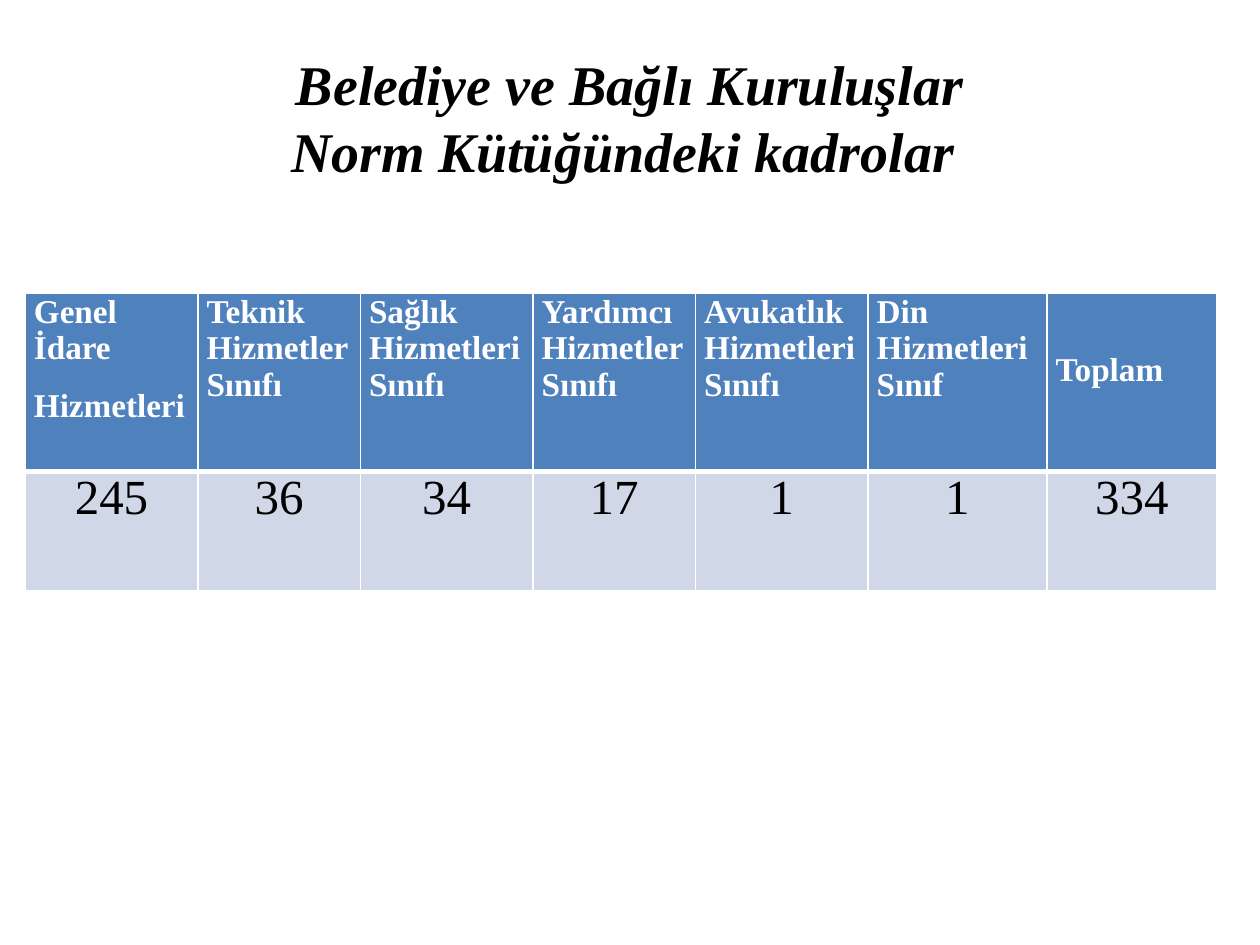
import pptx
import pptx.dml.color
import pptx.enum.text
import pptx.oxml
import pptx.oxml.ns
import pptx.util
from pptx.util import Inches

ALIGN = pptx.enum.text.PP_ALIGN
ANCHOR = pptx.enum.text.MSO_ANCHOR
HEADS = [
    ["Genel İdare ", "Hizmetleri"],
    ["Teknik Hizmetler Sınıfı"],
    ["Sağlık Hizmetleri Sınıfı"],
    ["Yardımcı Hizmetler Sınıfı"],
    ["Avukatlık Hizmetleri Sınıfı"],
    ["Din Hizmetleri Sınıf"],
    ["Toplam "],
]
COUNTS = [["245"], ["36"], ["34"], ["17"], ["1"], ["1"], ["334"]]
WIDTHS = [1.37, 1.29, 1.37, 1.29, 1.37, 1.42, 1.35]


def color(code):
    return pptx.dml.color.RGBColor.from_string(code)


def write(frame, paras, font="Times New Roman", size=19, ink="000000",
          bold=False, italic=False, align=ALIGN.CENTER, gap=0):
    """Fill a text frame; a newline inside a paragraph is a line break."""
    for i, text in enumerate(paras):
        para = frame.paragraphs[0] if i == 0 else frame.add_paragraph()
        para.alignment = align
        para.space_before = para.space_after = pptx.util.Pt(gap)
        for j, line in enumerate(text.split("\n")):
            if j:
                para.add_line_break()
            run = para.add_run()
            run.text = line
            run.font.name = font
            run.font.size = pptx.util.Pt(size)
            run.font.bold, run.font.italic = bold, italic
            run.font.color.rgb = color(ink)


def border(cell, **edges):
    """Draw white cell edges, given as L, R, T, B widths in points."""
    props = cell._tc.get_or_add_tcPr()
    for side, width in edges.items():
        props.append(pptx.oxml.parse_xml(
            f'<a:ln{side} {pptx.oxml.ns.nsdecls("a")} w="{pptx.util.Pt(width)}">'
            '<a:solidFill><a:srgbClr val="FFFFFF"/></a:solidFill>'
            f'</a:ln{side}>'))


class Deck:
    head = dict(size=19, ink="FFFFFF", bold=True, align=ALIGN.JUSTIFY, gap=6)
    body = dict(size=28, gap=6)

    def __init__(self):
        self.file = pptx.Presentation()
        self.file.slide_width, self.file.slide_height = Inches(10), Inches(7.5)
        self.slide = self.file.slides.add_slide(self.file.slide_layouts[5])

    def title(self, text, left, top, width, height):
        box = self.slide.shapes.title
        box.left, box.top = Inches(left), Inches(top)
        box.width, box.height = Inches(width), Inches(height)
        box.text_frame.vertical_anchor = ANCHOR.MIDDLE
        write(box.text_frame, [text], size=32, bold=True, italic=True)

    def table(self, rows, widths, heights, left, top):
        grid = self.slide.shapes.add_table(
            len(rows), len(widths), Inches(left), Inches(top),
            Inches(sum(widths)), Inches(sum(heights))).table
        for col, width in zip(grid.columns, widths):
            col.width = Inches(width)
        for r, (row, height) in enumerate(zip(rows, heights)):
            grid.rows[r].height = Inches(height)
            for c, paras in enumerate(row):
                self.cell(grid.cell(r, c), paras, r == 0)
        return grid

    def cell(self, cell, paras, first):
        cell.margin_left = cell.margin_right = Inches(0.07)
        cell.margin_top = cell.margin_bottom = 0
        border(cell, L=1, R=1, T=1 if first else 3, B=3 if first else 1)
        cell.fill.solid()
        cell.fill.fore_color.rgb = color("4F81BD" if first else "D0D8E8")
        write(cell.text_frame, paras, **(self.head if first else self.body))


def main():
    deck = Deck()
    deck.title("Belediye ve Bağlı Kuruluşlar\nNorm Kütüğündeki kadrolar ",
               0.5, 0.3, 9, 1.25)
    grid = deck.table([HEADS, COUNTS], WIDTHS, [1.41, 0.95], 0.2, 2.33)
    grid.cell(0, len(WIDTHS) - 1).margin_top = Inches(0.46)
    deck.file.save("out.pptx")


if __name__ == "__main__":
    main()
